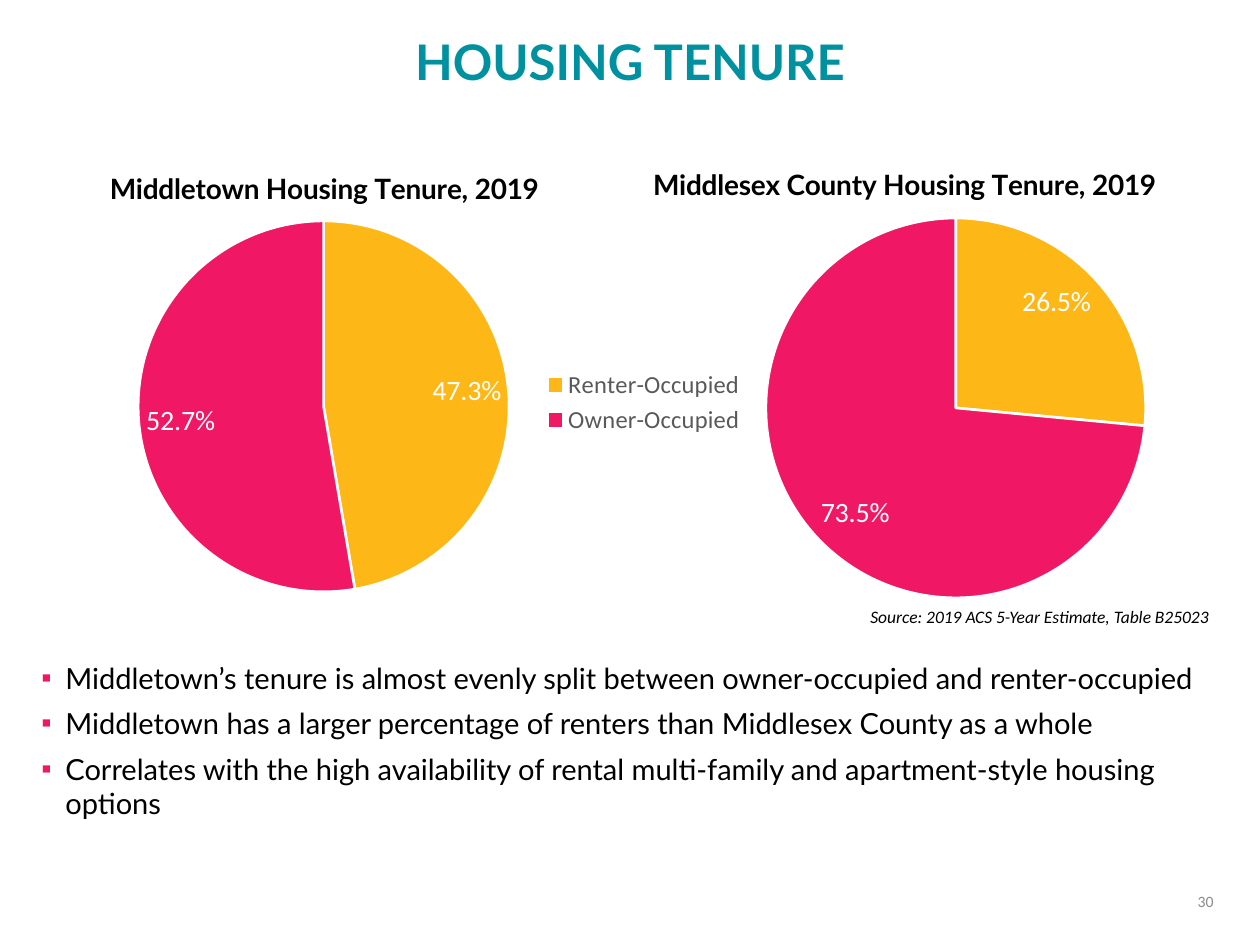
from lxml import etree
from pptx import Presentation
from pptx.chart.data import CategoryChartData
from pptx.dml.color import RGBColor
from pptx.enum.chart import XL_CHART_TYPE as ChartType, XL_LABEL_POSITION as LabelPosition
from pptx.enum.chart import XL_LEGEND_POSITION as LegendPosition
from pptx.enum.text import MSO_ANCHOR as Anchor, PP_ALIGN as Align
from pptx.oxml.ns import qn
from pptx.util import Pt

PX = 914400 / 126
ORANGE, PINK, TEAL = "FDB717", "F01865", "0091A0"
BLACK, WHITE, GRAY, LIGHT_GRAY = "000000", "FFFFFF", "595959", "8C8C8C"


def format_font(font, name, size, color, bold=False, italic=False):
    font.name, font.size = name, Pt(size)
    font.bold, font.italic = bold, italic
    font.color.rgb = RGBColor.from_string(color)


def place_part(element, index, **settings):
    for old_layout in element.findall(qn("c:layout")):
        element.remove(old_layout)
    layout = etree.Element(qn("c:layout"))
    manual = etree.SubElement(layout, qn("c:manualLayout"))
    for tag, value in settings.items():
        text = value if isinstance(value, str) else f"{value:.3f}"
        etree.SubElement(manual, qn(f"c:{tag}")).set("val", text)
    element.insert(index, layout)


presentation = Presentation()
presentation.slide_width, presentation.slide_height = round(1260 * PX), round(945 * PX)
slide = presentation.slides.add_slide(presentation.slide_layouts[5])

title = slide.shapes.title
title.left, title.top, title.width, title.height = 0, round(32 * PX), round(1260 * PX), round(66 * PX)
title.text_frame.text = "HOUSING TENURE"
title.text_frame.vertical_anchor = Anchor.TOP
paragraph = title.text_frame.paragraphs[0]
paragraph.alignment = Align.CENTER
paragraph.line_spacing = 0.9
format_font(paragraph.runs[0].font, "Lato", 28, TEAL, bold=True)

pies = [
    ("Middlesex County Housing Tenure, 2019", ("Renter-Occupied", "Owner-Occupied"), (0.265, 0.735),
     (504, 134, 682, 483), (648, 159), (766, 218, 380), (540, 365)),
    ("Middletown Housing Tenure, 2019", ("1", "2"), (0.473, 0.527),
     (-18, 137, 682, 474), (105, 163), (138, 221, 371), None),
]
for heading, categories, shares, box, heading_at, pie_at, legend_at in pies:
    left, top, width, height = box
    data = CategoryChartData(number_format="0.0%")
    data.categories = categories
    data.add_series("Series 1", shares)
    chart = slide.shapes.add_chart(ChartType.PIE, *[round(length * PX) for length in box], data).chart
    format_font(chart.font, "Calibri", 10, BLACK)
    background = etree.Element(qn("c:spPr"))
    etree.SubElement(background, qn("a:noFill"))
    etree.SubElement(etree.SubElement(background, qn("a:ln")), qn("a:noFill"))
    chart.element.find(qn("c:chart")).addnext(background)

    chart.has_title = True
    chart.chart_title.text_frame.text = heading
    format_font(chart.chart_title.text_frame.paragraphs[0].runs[0].font, "Lato", 16, BLACK, bold=True)
    x, y = heading_at
    place_part(chart.chart_title.format.element if hasattr(chart.chart_title.format, "element")
               else chart.element.find(".//" + qn("c:title")), 1,
               xMode="edge", yMode="edge", x=(x - left) / width, y=(y - top) / height)

    x, y, diameter = pie_at
    place_part(chart.element.find(".//" + qn("c:plotArea")), 0, layoutTarget="inner",
               xMode="edge", yMode="edge", x=(x - left) / width, y=(y - top) / height,
               w=diameter / width, h=diameter / height)

    chart.has_legend = legend_at is not None
    if legend_at:
        chart.legend.position = LegendPosition.LEFT
        chart.legend.include_in_layout = False
        format_font(chart.legend.font, "Calibri", 14, GRAY)
        x, y = legend_at
        place_part(chart.element.find(".//" + qn("c:legend")), 1,
                   xMode="edge", yMode="edge", x=(x - left) / width, y=(y - top) / height)

    plot = chart.plots[0]
    plot.vary_by_categories = True
    for index, color in enumerate((ORANGE, PINK)):
        slice_format = plot.series[0].points[index].format
        slice_format.fill.solid()
        slice_format.fill.fore_color.rgb = RGBColor.from_string(color)
        slice_format.line.color.rgb = RGBColor.from_string(WHITE)
        slice_format.line.width = Pt(1.5)
    labels = plot.series[0].data_labels
    labels.show_value = True
    labels.show_percentage = False
    labels.number_format, labels.number_format_is_linked = "0.0%", False
    labels.position = LabelPosition.INSIDE_END
    format_font(labels.font, "Calibri", 16, WHITE)

findings = [
    "Middletown’s tenure is almost evenly split between owner-occupied and renter-occupied",
    "Middletown has a larger percentage of renters than Middlesex County as a whole",
    "Correlates with the high availability of rental multi-family and apartment-style housing options",
]
texts = [
    (findings, (29, 654, 1231, 203), Align.LEFT, Anchor.TOP, ("Lato", 16.6, BLACK)),
    (["30"], (945, 876, 281, 50), Align.RIGHT, Anchor.MIDDLE, ("Calibri", 9, LIGHT_GRAY)),
    (["Source: 2019 ACS 5-Year Estimate, Table B25023"], (858, 600, 374, 34), Align.LEFT, Anchor.TOP,
     ("Calibri", 10, BLACK, False, True)),
]
for lines, box, alignment, anchor, style in texts:
    text_frame = slide.shapes.add_textbox(*[round(length * PX) for length in box]).text_frame
    text_frame.word_wrap = True
    text_frame.vertical_anchor = anchor
    text_frame.text = "\n".join(lines)
    for index, paragraph in enumerate(text_frame.paragraphs):
        paragraph.alignment = alignment
        if index:
            paragraph.space_before = Pt(6)
        if lines is findings:
            properties = paragraph._p.get_or_add_pPr()
            properties.set("marL", str(round(24 * PX)))
            properties.set("indent", str(round(-24 * PX)))
            bullet_color = etree.SubElement(properties, qn("a:buClr"))
            etree.SubElement(bullet_color, qn("a:srgbClr")).set("val", PINK)
            etree.SubElement(properties, qn("a:buFont")).set("typeface", "Arial")
            etree.SubElement(properties, qn("a:buChar")).set("char", "▪")
        format_font(paragraph.runs[0].font, *style)

presentation.save("out.pptx")
